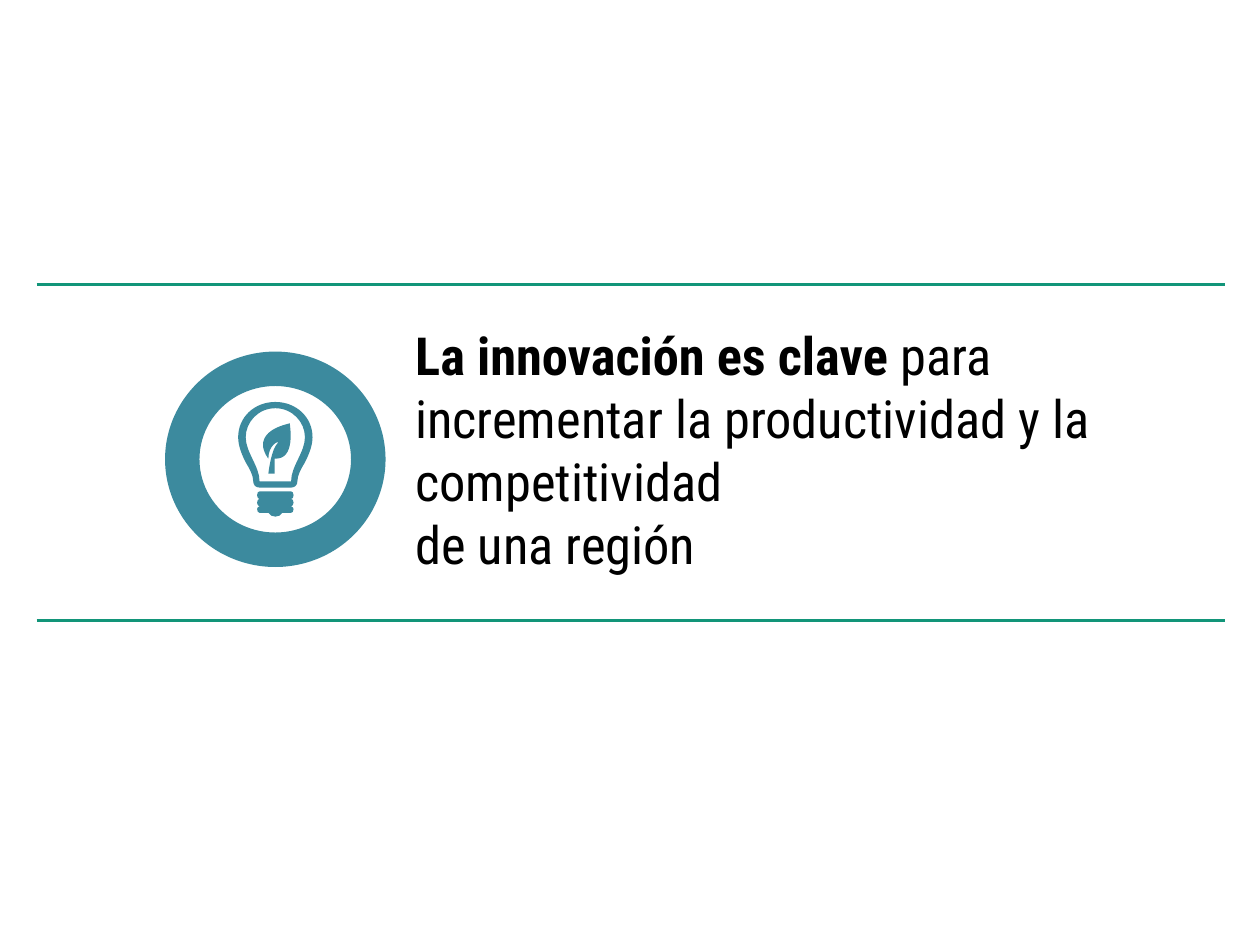
import pptx
import pptx.util
import pptx.dml.color
import pptx.enum.shapes
import pptx.enum.text
import pptx.oxml.ns
import lxml.etree

TEAL = pptx.dml.color.RGBColor(0x3C, 0x8A, 0x9E)
GREEN = pptx.dml.color.RGBColor(0x12, 0x95, 0x79)
BLACK = pptx.dml.color.RGBColor(0, 0, 0)
FONT = "Roboto Condensed"
COLS, ROWS = 1000, 750
WIDE = pptx.util.Inches(10)
CELL = WIDE // COLS
BULB = 59

GLASS = [(29.5, 0), (13, 0, 0, 12, 0, 28), (0, 35, 3, 42, 6, 48),
         (9, 53, 12, 58, 12, 63), (12, 66, 14, 68, 17, 68)]
HOLLOW = [(29.5, 5), (16, 5, 6, 16, 6, 28), (6, 40, 17, 51, 17, 63)]
SCREW = [(29.5, 71), (17, 71),
         (16, 71, 15, 72, 15, 74), (15, 76, 16, 77, 17, 77),
         (16, 77, 15, 78, 15, 80), (15, 81, 16, 83, 17, 83),
         (16, 83, 15, 84, 15, 85), (15, 87, 16, 88, 17, 88),
         (24, 88), (25, 90, 27, 91, 29.5, 91)]
LEAF = [(41, 17), (41, 19, 46, 46, 29, 45), (29, 57), (24, 57),
        (24, 57, 26, 37, 32, 32), (32, 31, 24, 34, 24, 45),
        (24, 45, 7, 25, 41, 17)]


def grid(*cells):
    return [pptx.util.Emu(round(cell * CELL)) for cell in cells]


def pairs(flat):
    return list(zip(flat[::2], flat[1::2]))


def mirror(half):
    x, y = half[-1][-2:]
    back = [] if x == BULB / 2 else [(BULB - x, y)]
    for prior, part in reversed(list(zip(half, half[1:]))):
        route = reversed(pairs(prior[-2:] + part[:-2]))
        back.append(tuple(n for x, y in route for n in (BULB - x, y)))
    return half + back


def paint(shape, color):
    shape.shadow.inherit = False
    shape.fill.solid()
    shape.fill.fore_color.rgb = color
    shape.line.fill.background()


def bend(line, part):
    line.tag = pptx.oxml.ns.qn("a:cubicBezTo")
    for index, point in enumerate(pairs(part[:-2])):
        x, y = grid(*point)
        dot = lxml.etree.Element(pptx.oxml.ns.qn("a:pt"), x=str(x), y=str(y))
        line.insert(index, dot)


def add_bulb(slide, left, top):
    loops = [mirror(half) for half in (GLASS, HOLLOW, SCREW)] + [LEAF]
    pen = slide.shapes.build_freeform(*grid(*loops[0][0]))
    for index, loop in enumerate(loops):
        if index:
            pen.move_to(*grid(*loop[0]))
        ends = [grid(*part[-2:]) for part in loop[1:]]
        pen.add_line_segments(ends, close=True)
    bulb = pen.convert_to_shape(*grid(left, top))
    lines = list(bulb._element.iter(pptx.oxml.ns.qn("a:lnTo")))
    parts = [part for loop in loops for part in loop[1:]]
    for line, part in zip(lines, parts):
        if len(part) > 2:
            bend(line, part)
    paint(bulb, TEAL)


def add_ring(slide, *box, band):
    kind = pptx.enum.shapes.MSO_SHAPE.DONUT
    ring = slide.shapes.add_shape(kind, *grid(*box))
    ring.adjustments[0] = band
    paint(ring, TEAL)


def add_rule(slide, left, right, row):
    kind = pptx.enum.shapes.MSO_CONNECTOR.STRAIGHT
    rule = slide.shapes.add_connector(kind, *grid(left, row, right, row))
    rule.line.color.rgb = GREEN
    rule.line.width = pptx.util.Pt(1.75)
    tag = pptx.oxml.ns.qn("a:effectLst")
    lxml.etree.SubElement(rule._element.spPr, tag)


def add_run(para, text, size=30, bold=False, color=BLACK):
    run = para.add_run()
    run.text = text
    run.font.name = FONT
    run.font.size = pptx.util.Pt(size)
    run.font.bold = bold
    run.font.color.rgb = color


def add_claim(slide, *box):
    frame = slide.shapes.add_textbox(*grid(*box)).text_frame
    frame.word_wrap = True
    frame.auto_size = pptx.enum.text.MSO_AUTO_SIZE.SHAPE_TO_FIT_TEXT
    inset = pptx.util.Inches(0.04)
    frame.margin_left = frame.margin_right = inset
    frame.margin_top = frame.margin_bottom = inset
    first = frame.paragraphs[0]
    add_run(first, "La innovación es clave ", bold=True)
    add_run(first, "para")
    for text in ("incrementar la productividad y la competitividad",
                 "de una región"):
        add_run(frame.add_paragraph(), text)


def main():
    deck = pptx.Presentation()
    deck.slide_width = WIDE
    deck.slide_height = CELL * ROWS
    slide = deck.slides.add_slide(deck.slide_layouts[6])
    add_claim(slide, 325.5, 252, 568, 211)
    add_bulb(slide, 189, 319)
    add_ring(slide, 131, 279, 175, 171, band=0.16)
    for row in (226, 492.5):
        add_rule(slide, 29, 972, row)
    deck.save("out.pptx")


if __name__ == "__main__":
    main()
